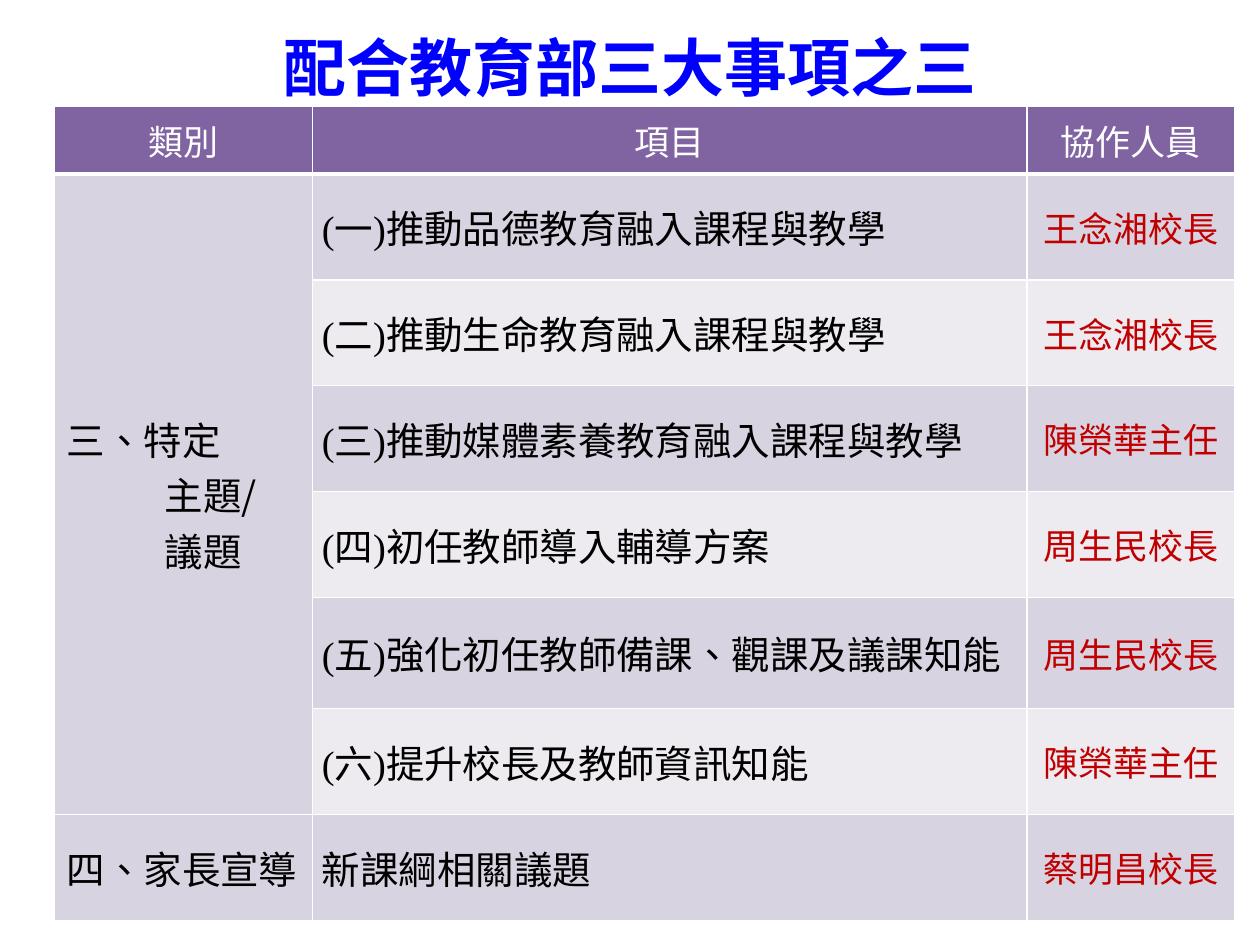
from lxml import etree
from pptx import Presentation
from pptx.dml.color import RGBColor
from pptx.enum.text import MSO_ANCHOR, PP_ALIGN
from pptx.oxml.ns import qn
from pptx.util import Pt

MIDDLE = MSO_ANCHOR.MIDDLE
LEFT, CENTER, JUST = PP_ALIGN.LEFT, PP_ALIGN.CENTER, PP_ALIGN.JUSTIFY

WHITE = RGBColor(0xFF, 0xFF, 0xFF)
BLACK = RGBColor(0x00, 0x00, 0x00)
BLUE = RGBColor(0x00, 0x00, 0xFF)
RED = RGBColor(0xC0, 0x00, 0x00)
PURPLE = RGBColor(0x80, 0x64, 0xA2)
BANDS = [RGBColor(0xD8, 0xD3, 0xE0), RGBColor(0xED, 0xEA, 0xF0)]

SANS = "Noto Sans CJK SC"
SERIF = "Times New Roman"

TITLE = "配合教育部三大事項之三"
HEADS = ["類別", "項目", "協作人員"]
TOPIC = "三、特定\n主題/\n議題"
ROWS = [
    (TOPIC, "(一)推動品德教育融入課程與教學", "王念湘校長"),
    ("", "(二)推動生命教育融入課程與教學", "王念湘校長"),
    ("", "(三)推動媒體素養教育融入課程與教學", "陳榮華主任"),
    ("", "(四)初任教師導入輔導方案", "周生民校長"),
    ("", "(五)強化初任教師備課、觀課及議課知能", "周生民校長"),
    ("", "(六)提升校長及教師資訊知能", "陳榮華主任"),
    ("四、家長宣導", "新課綱相關議題", "蔡明昌校長"),
]
WIDTHS = [147.6, 408.2, 118.8]
HEAD_H, ROW_H = 38.9, 60.5
HANG = (24, -24)
PUSH = (0, 56)


class Deck:
    def __init__(self):
        self.prs = Presentation()
        self.prs.slide_width, self.prs.slide_height = Pt(720), Pt(540)
        self.slide = self.prs.slides.add_slide(self.prs.slide_layouts[5])

    def style(self, para, face, size, color, align, bold=False, indent=None):
        para.alignment = align
        if indent:
            props = para._p.get_or_add_pPr()
            props.set("marL", str(Pt(indent[0])))
            props.set("indent", str(Pt(indent[1])))
        for run in para.runs:
            font = run.font
            font.name, font.size, font.bold = face, Pt(size), bold
            font.color.rgb = color
            props = run._r.get_or_add_rPr()
            props.set("lang", "zh-TW")
            etree.SubElement(props, qn("a:ea"), typeface=SANS)

    def title(self, text, left, top, width, height):
        box = self.slide.shapes.title
        box.left, box.top = Pt(left), Pt(top)
        box.width, box.height = Pt(width), Pt(height)
        frame = box.text_frame
        frame.text, frame.vertical_anchor = text, MIDDLE
        self.style(frame.paragraphs[0], SERIF, 36, BLUE, CENTER, True)

    def table(self, left, top, widths, heights):
        frame = self.slide.shapes.add_table(
            len(heights), len(widths), Pt(left), Pt(top),
            Pt(sum(widths)), Pt(sum(heights)))
        grid = frame.table
        for col, width in zip(grid.columns, widths):
            col.width = Pt(width)
        for row, height in zip(grid.rows, heights):
            row.height = Pt(height)
        return grid

    def border(self, cell, bottom):
        props = cell._tc.get_or_add_tcPr()
        for spot, (side, width) in enumerate(
                [("L", 1), ("R", 1), ("T", 1), ("B", bottom)]):
            line = etree.Element(qn(f"a:ln{side}"), w=str(Pt(width)))
            fill = etree.SubElement(line, qn("a:solidFill"))
            etree.SubElement(fill, qn("a:srgbClr"), val=str(WHITE))
            props.insert(spot, line)

    def cell(self, cell, text, fill, face, size, color, align,
             indent=None, pad=(5.4, 0), bottom=1):
        cell.text, cell.vertical_anchor = text, MIDDLE
        cell.margin_left = cell.margin_right = Pt(pad[0])
        cell.margin_top = cell.margin_bottom = Pt(pad[1])
        cell.fill.solid()
        cell.fill.fore_color.rgb = fill
        self.border(cell, bottom)
        for para in cell.text_frame.paragraphs:
            self.style(para, face, size, color, align, indent=indent)


def main():
    deck = Deck()
    deck.title(TITLE, 36, 9.4, 648, 56.9)
    grid = deck.table(31, 60.5, WIDTHS, [HEAD_H] + [ROW_H] * len(ROWS))

    # Header row
    for col, text in enumerate(HEADS):
        deck.cell(grid.cell(0, col), text, PURPLE, SANS, 20, WHITE, CENTER,
                  bottom=3)

    # Banded body rows
    for row, (kind, item, name) in enumerate(ROWS, 1):
        fill = BANDS[(row - 1) % 2]
        first = grid.cell(row, 0)
        topic = kind == TOPIC
        deck.cell(first, kind, fill, SANS if topic else SERIF, 22, BLACK,
                  LEFT if topic else JUST, None if topic else HANG,
                  pad=(7.2, 3.6))
        deck.cell(grid.cell(row, 1), item, fill, SERIF, 22, BLACK, JUST, HANG)
        deck.cell(grid.cell(row, 2), name, fill, SERIF, 20, RED, CENTER)

    # Topic cell spans six rows, its later lines pushed in
    topic = grid.cell(1, 0)
    topic.merge(grid.cell(6, 0))
    for para in topic.text_frame.paragraphs[1:]:
        props = para._p.get_or_add_pPr()
        props.set("marL", str(Pt(PUSH[0])))
        props.set("indent", str(Pt(PUSH[1])))

    deck.prs.save("out.pptx")


if __name__ == "__main__":
    main()
